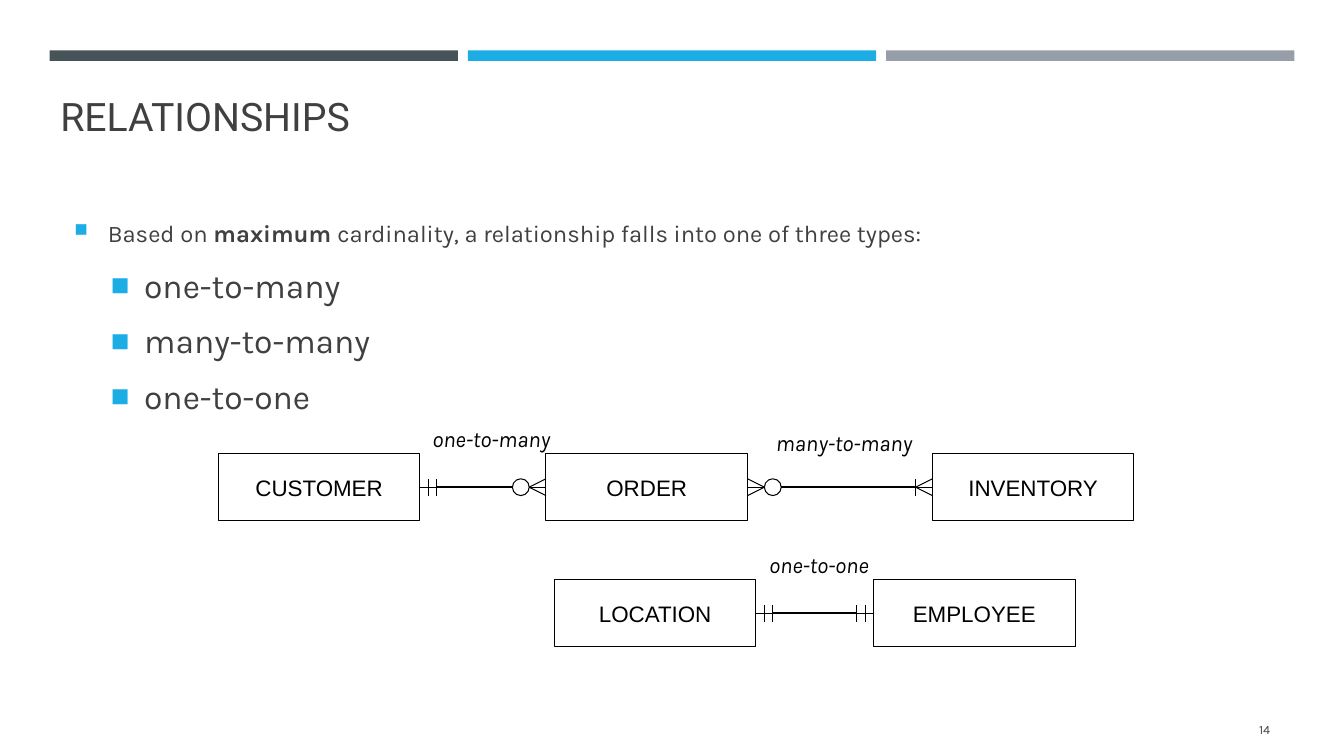
from dataclasses import dataclass

from lxml import etree
from pptx import Presentation
from pptx import util as u
from pptx.dml.color import RGBColor
from pptx.enum import shapes, text
from pptx.oxml.ns import qn
from pptx.slide import Slide

COLUMNS, ROWS = 160, 90
CELL = u.Inches(1) // 12
BLACK, GREY, BLUE = "000000", "404040", "1CADE4"
BOX_WIDTH, BOX_HEIGHT = 24, 8
ONE, OPTIONAL_MANY, MANY = "one", "optional many", "many"


@dataclass(frozen=True)
class Entity:
    name: str
    column: float
    row: float


@dataclass(frozen=True)
class Relation:
    left: Entity
    right: Entity
    left_end: str
    right_end: str
    label: str
    label_column: float
    label_row: float


@dataclass(frozen=True)
class Span:
    words: str
    size: float
    bold: bool = False


CUSTOMER = Entity("CUSTOMER", 26, 54)
ORDER = Entity("ORDER", 65, 54)
INVENTORY = Entity("INVENTORY", 111, 54)
LOCATION = Entity("LOCATION", 66, 69)
EMPLOYEE = Entity("EMPLOYEE", 104, 69)
ENTITIES = [LOCATION, EMPLOYEE, CUSTOMER, INVENTORY, ORDER]

RELATIONS = [
    Relation(CUSTOMER, ORDER, ONE, OPTIONAL_MANY, "one-to-many", 47, 50),
    Relation(ORDER, INVENTORY, OPTIONAL_MANY, MANY, "many-to-many", 89, 50.5),
    Relation(LOCATION, EMPLOYEE, ONE, ONE, "one-to-one", 86, 65),
]

INTRO = [
    Span("Based on ", 17),
    Span("maximum ", 17, bold=True),
    Span("cardinality, a relationship falls into one of three types:", 17),
    Span(" ", 24),
]
TYPES = ["one-to-many", "many-to-many", "one-to-one"]


def cells(count: float) -> int:
    return round(count * CELL)


def color(value: str) -> RGBColor:
    return RGBColor.from_string(value)


def add_figure(page: Slide, kind, left: float, top: float, width: float, height: float,
               fill: str = "", line: str = ""):
    figure = page.shapes.add_shape(kind, cells(left), cells(top), cells(width), cells(height))
    figure.shadow.inherit = False
    if fill:
        figure.fill.solid()
        figure.fill.fore_color.rgb = color(fill)
    else:
        figure.fill.background()
    if line:
        figure.line.color.rgb = color(line)
        figure.line.width = u.Pt(0.75)
    else:
        figure.line.fill.background()
    return figure


def add_line(page: Slide, start: tuple[float, float], end: tuple[float, float],
             width: float = 0.75) -> None:
    line = page.shapes.add_connector(shapes.MSO_CONNECTOR.STRAIGHT, *map(cells, start + end))
    line.line.color.rgb = color(BLACK)
    line.line.width = u.Pt(width)
    etree.SubElement(line._element.spPr, qn("a:effectLst"))


def add_textbox(page: Slide, left: float, top: float, width: float, height: float,
                anchor=text.MSO_ANCHOR.MIDDLE):
    box = page.shapes.add_textbox(cells(left), cells(top), cells(width), cells(height))
    box.text_frame.word_wrap = True
    box.text_frame.vertical_anchor = anchor
    return box


def write(para, words: str, *, size: float, font: str = "Karla", fill: str = GREY,
          bold: bool = False, italic: bool = False, align=text.PP_ALIGN.LEFT) -> None:
    para.alignment = align
    span = para.add_run()
    span.text = words
    span.font.name = font
    span.font.size = u.Pt(size)
    span.font.bold = bold
    span.font.italic = italic
    span.font.color.rgb = color(fill)


def add_bullet(para, indent: float) -> None:
    para.space_before = u.Pt(5)
    para.space_after = u.Pt(6)
    properties = para._p.get_or_add_pPr()
    properties.set("marL", str(u.Inches(indent)))
    properties.set("indent", str(u.Inches(-0.33)))
    tint = etree.SubElement(properties, qn("a:buClr"))
    etree.SubElement(tint, qn("a:srgbClr"), val=BLUE)
    etree.SubElement(properties, qn("a:buSzPct"), val="92000")
    etree.SubElement(properties, qn("a:buFont"), typeface="Arial")
    etree.SubElement(properties, qn("a:buChar"), char="■")


def add_entity(page: Slide, entity: Entity) -> None:
    box = add_figure(page, shapes.MSO_SHAPE.RECTANGLE, entity.column, entity.row,
                     BOX_WIDTH, BOX_HEIGHT, line=BLACK)
    box.text_frame.word_wrap = False
    box.text_frame.vertical_anchor = text.MSO_ANCHOR.MIDDLE
    write(box.text_frame.paragraphs[0], entity.name, size=16, font="Arial", fill=BLACK,
          align=text.PP_ALIGN.CENTER)


def add_end(page: Slide, kind: str, edge: float, row: float, direction: int) -> float:
    tip = edge + 2 * direction
    spread = [0] if kind == ONE else [0, 1, -1]
    for offset in spread:
        add_line(page, (tip, row), (edge, row + offset))
    bars = {ONE: [1, 2], MANY: [2], OPTIONAL_MANY: []}[kind]
    for step in bars:
        column = edge + step * direction
        add_line(page, (column, row - 1), (column, row + 1))
    if kind == OPTIONAL_MANY:
        add_figure(page, shapes.MSO_SHAPE.OVAL, tip + direction - 1, row - 1, 2, 2, line=BLACK)
        return tip + 2 * direction
    return tip


def add_relation(page: Slide, relation: Relation) -> None:
    row = relation.left.row + BOX_HEIGHT / 2
    start = add_end(page, relation.left_end, relation.left.column + BOX_WIDTH, row, 1)
    end = add_end(page, relation.right_end, relation.right.column, row, -1)
    add_line(page, (start, row), (end, row), width=1)
    box = add_textbox(page, relation.label_column, relation.label_row, 23, 4.4,
                      text.MSO_ANCHOR.TOP)
    write(box.text_frame.paragraphs[0], relation.label, size=16, fill=BLACK, italic=True,
          align=text.PP_ALIGN.CENTER)


def add_body(page: Slide) -> None:
    frame = add_textbox(page, 7.7, 18.4, 144.7, 47.6).text_frame
    frame.margin_bottom = u.Inches(0.92)
    intro = frame.paragraphs[0]
    intro.line_spacing = 1.1
    add_bullet(intro, 0.33)
    for span in INTRO:
        write(intro, span.words, size=span.size, bold=span.bold)
    for name in TYPES:
        para = frame.add_paragraph()
        para.level = 1
        add_bullet(para, 0.69)
        write(para, name, size=24)


def main() -> None:
    deck = Presentation()
    deck.slide_width, deck.slide_height = cells(COLUMNS), cells(ROWS)
    page = deck.slides.add_slide(deck.slide_layouts[6])
    for index, fill in enumerate(["465359", BLUE, "969FA7"]):
        add_figure(page, shapes.MSO_SHAPE.RECTANGLE, 5.9 + 49.8 * index, 6, 48.6, 1.25, fill=fill)
    title = add_textbox(page, 6, 1.55, 144.7, 15.6, text.MSO_ANCHOR.BOTTOM)
    write(title.text_frame.paragraphs[0], "RELATIONSHIPS", size=28, font="Roboto")
    add_body(page)
    number = add_textbox(page, 138.6, 84.4, 13.8, 4.8)
    write(number.text_frame.paragraphs[0], "14", size=9, align=text.PP_ALIGN.RIGHT)
    for entity in ENTITIES:
        add_entity(page, entity)
    for relation in RELATIONS:
        add_relation(page, relation)
    deck.save("out.pptx")


if __name__ == "__main__":
    main()
